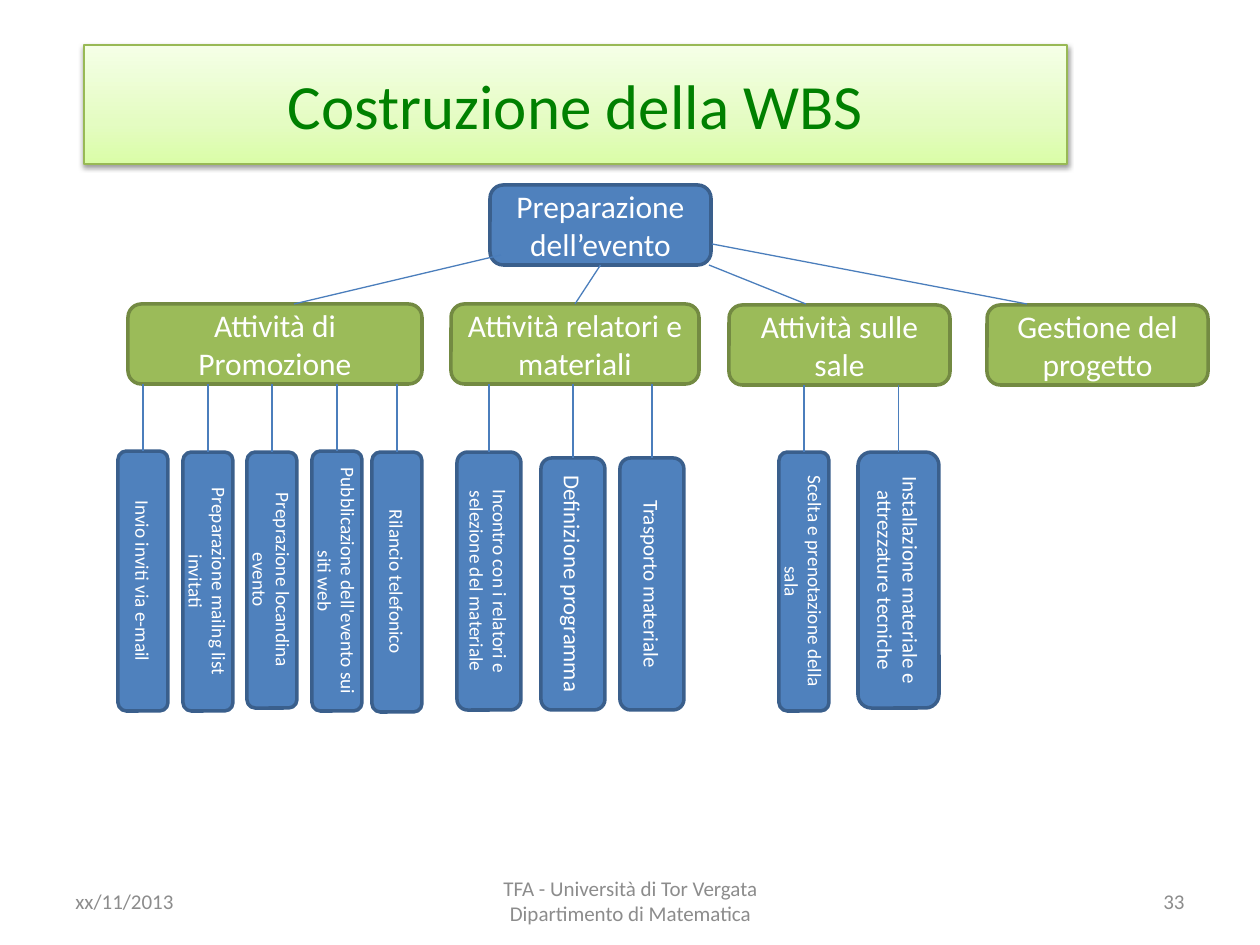
from lxml.etree import SubElement
from pptx import Presentation
from pptx.dml.color import RGBColor
from pptx.enum.shapes import MSO_CONNECTOR, MSO_SHAPE
from pptx.enum.text import MSO_ANCHOR, MSO_AUTO_SIZE, PP_ALIGN
from pptx.oxml import parse_xml
from pptx.oxml.ns import nsdecls, qn
from pptx.util import Emu, Pt

FONT = "Calibri"
WHITE = RGBColor(0xFF, 0xFF, 0xFF)
GREY = RGBColor(0x8C, 0x8C, 0x8C)
TITLE_GREEN = RGBColor(0x00, 0x80, 0x00)
TITLE_EDGE = RGBColor(0x98, 0xB9, 0x55)
BLUE = RGBColor(0x4F, 0x81, 0xBD)
BLUE_EDGE = RGBColor(0x3A, 0x5F, 0x8C)
GREEN = RGBColor(0x9B, 0xBB, 0x59)
GREEN_EDGE = RGBColor(0x73, 0x8A, 0x42)
LINK = RGBColor(0x4B, 0x7E, 0xBC)

TITLE_FILL = f"""<a:gradFill {nsdecls('a')} rotWithShape="1"><a:gsLst>
<a:gs pos="0"><a:srgbClr val="DAFDA7"/></a:gs>
<a:gs pos="35000"><a:srgbClr val="E4FCC2"/></a:gs>
<a:gs pos="100000"><a:srgbClr val="F5FFE7"/></a:gs>
</a:gsLst><a:lin ang="16200000" scaled="1"/></a:gradFill>"""
TITLE_SHADOW = f"""<a:effectLst {nsdecls('a')}>
<a:outerShdw blurRad="40000" dist="20000" dir="5400000" rotWithShape="0">
<a:srgbClr val="000000"><a:alpha val="38000"/></a:srgbClr>
</a:outerShdw></a:effectLst>"""

# Activities: text, left, top, width, and their tasks:
# text, left, top, width, height, font size
ACTIVITIES = [
    ("Attività di Promozione", 128, 304, 294, [
        ("Invio inviti via e-mail", 118, 451, 50, 260, 11),
        ("Preparazione mailng list invitati", 183, 452, 50, 259, 11),
        ("Preprazione locandina evento", 247, 452, 50, 256, 11),
        ("Pubblicazione dell'evento sui siti web", 312, 451, 50, 260, 11),
        ("Rilancio telefonico", 372, 452, 50, 260, 11),
    ]),
    ("Attività relatori e materiali", 451, 304, 248, [
        ("Incontro con i relatori e selezione del materiale",
         457, 452, 64, 258, 11),
        ("Definizione programma", 541, 458, 64, 252, 13),
        ("Trasporto materiale", 620, 458, 64, 252, 12),
    ]),
    ("Attività sulle sale", 729, 305, 221, [
        ("Scelta e prenotazione della sala", 779, 452, 50, 259, 11),
        ("Installazione materiale e attrezzature tecniche",
         858, 452, 81, 256, 12),
    ]),
    ("Gestione del progetto", 987, 305, 221, []),
]
BOX_H = 80

# Lines from the root to activities 0, 2 and 3: activity, from, to
ROOT_LINKS = [
    ((501, 255), (294, 304)),
    ((709, 265), (806, 304)),
    ((712, 244), (1027, 304)),
]

FOOTERS = [
    ("xx/11/2013", 63, 294, PP_ALIGN.LEFT),
    ("TFA - Università di Tor Vergata\vDipartimento di Matematica",
     431, 399, PP_ALIGN.CENTER),
    ("33", 903, 294, PP_ALIGN.RIGHT),
]


def px(n):
    return Emu(round(n * 914400 / 126))


def write(sp, text, size, color=WHITE, align=PP_ALIGN.CENTER, vertical=False):
    tf = sp.text_frame
    tf.word_wrap = True
    tf.auto_size = MSO_AUTO_SIZE.NONE
    tf.vertical_anchor = MSO_ANCHOR.MIDDLE
    if vertical:
        tf._txBody.bodyPr.set("vert", "vert")
    p = tf.paragraphs[0]
    p.text = text
    p.alignment = align
    for r in p.runs:
        r.font.name = FONT
        r.font.size = Pt(size)
        r.font.color.rgb = color


def add_title(s, text):
    sp = s.shapes.title
    sp.left, sp.top, sp.width, sp.height = map(px, (84, 45, 983, 119))
    sp.line.color.rgb = TITLE_EDGE
    sp.line.width = Pt(0.75)
    sp.line._ln.addprevious(parse_xml(TITLE_FILL))
    sp.line._ln.addnext(parse_xml(TITLE_SHADOW))
    write(sp, text, 36, color=TITLE_GREEN)


def add_box(s, text, x, y, w, h, size=18, fill=BLUE, edge=BLUE_EDGE,
            vertical=False):
    sp = s.shapes.add_shape(MSO_SHAPE.ROUNDED_RECTANGLE,
                            px(x), px(y), px(w), px(h))
    sp.shadow.inherit = False
    sp.fill.solid()
    sp.fill.fore_color.rgb = fill
    sp.line.color.rgb = edge
    sp.line.width = Pt(2)
    write(sp, text, size, vertical=vertical)
    return sp


def add_link(s, start=(0, 0), end=(0, 0), begin_box=None, end_box=None):
    """Line between two points, or from a box's bottom to a box's top."""
    c = s.shapes.add_connector(MSO_CONNECTOR.STRAIGHT,
                               *map(px, (*start, *end)))
    if begin_box is not None:
        c.begin_connect(begin_box, 2)
    if end_box is not None:
        c.end_connect(end_box, 0)
    c.line.color.rgb = LINK
    c.line.width = Pt(0.75)
    SubElement(c._element.spPr, qn("a:effectLst"))


def add_footer(s, text, x, w, align):
    sp = s.shapes.add_textbox(px(x), px(876), px(w), px(50))
    write(sp, text, 12, color=GREY, align=align)


def main():
    prs = Presentation()
    prs.slide_width, prs.slide_height = px(1260), px(945)
    s = prs.slides.add_slide(prs.slide_layouts[5])
    add_title(s, "Costruzione della WBS")

    # Root of the breakdown
    root = add_box(s, "Preparazione dell’evento", 490, 185, 221, BOX_H)

    # Activities with their tasks below
    activities = []
    for text, x, y, w, tasks in ACTIVITIES:
        activities.append(add_box(s, text, x, y, w, BOX_H,
                                  fill=GREEN, edge=GREEN_EDGE))
        for label, left, top, width, height, size in tasks:
            task = add_box(s, label, left, top, width, height, size=size,
                           vertical=True)
            mid = left + width / 2
            add_link(s, (mid, y + BOX_H), (mid, top), end_box=task)

    # Links from the root
    add_link(s, begin_box=root, end_box=activities[1])
    for start, end in ROOT_LINKS:
        add_link(s, start, end)

    for footer in FOOTERS:
        add_footer(s, *footer)
    prs.save("out.pptx")


if __name__ == "__main__":
    main()
